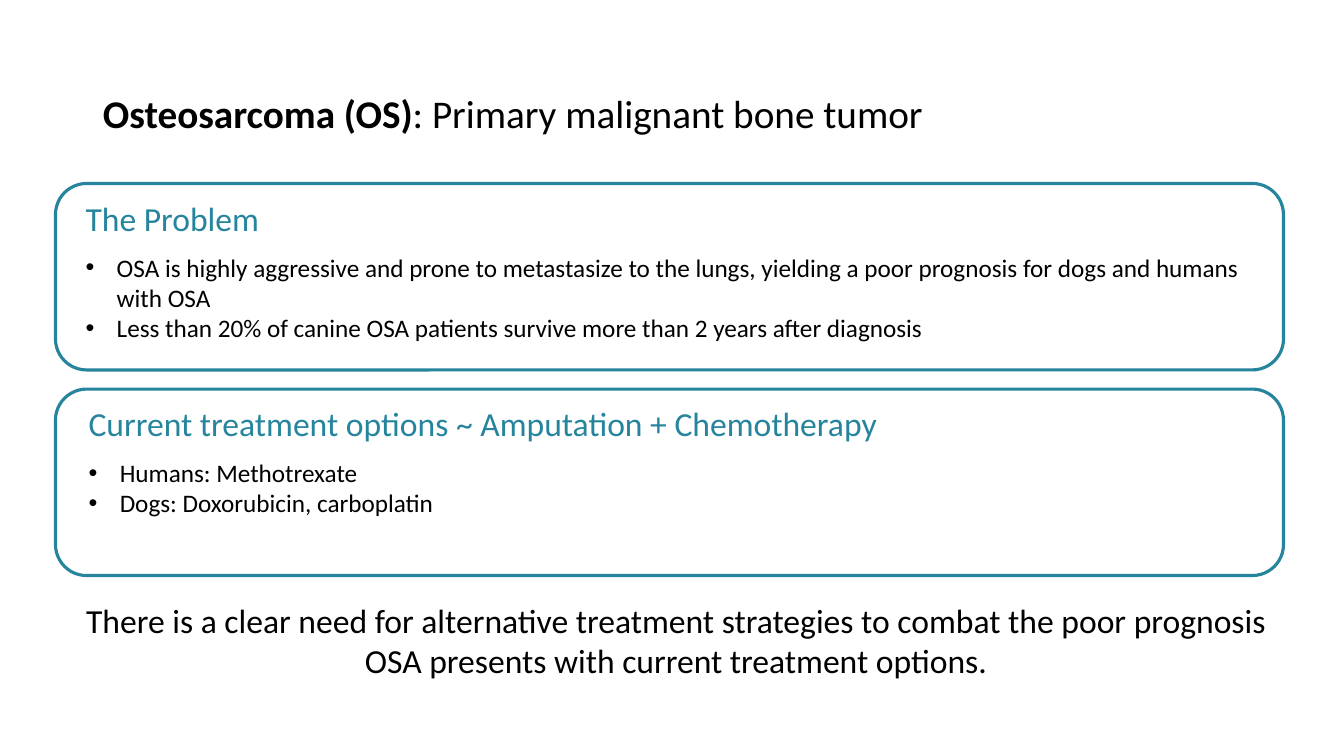
from dataclasses import dataclass

from lxml import etree
from pptx import Presentation
from pptx.dml.color import RGBColor
from pptx.enum.shapes import MSO_SHAPE as Shape
from pptx.enum.text import MSO_ANCHOR as Anchor, MSO_AUTO_SIZE as AutoSize, PP_ALIGN as Align
from pptx.oxml.ns import qn
from pptx.util import Inches, Pt

BLACK = RGBColor(0x00, 0x00, 0x00)
WHITE = RGBColor(0xFF, 0xFF, 0xFF)
TEAL = RGBColor(0x26, 0x85, 0x9D)
FONT = "Calibri"
BULLET_INDENT = Inches(0.31)


@dataclass(frozen=True)
class Panel:
    top: float
    text_left: float
    text_height: float
    heading: str
    points: tuple[str, ...]


PANELS = (
    Panel(1.82, 0.75, 1.85, "The Problem", (
        "OSA is highly aggressive and prone to metastasize to the lungs, "
        "yielding a poor prognosis for dogs and humans with OSA",
        "Less than 20% of canine OSA patients survive more than 2 years after diagnosis",
    )),
    Panel(3.86, 0.78, 1.55, "Current treatment options ~ Amputation + Chemotherapy", (
        "Humans: Methotrexate",
        "Dogs: Doxorubicin, carboplatin",
    )),
)


def add_run(paragraph, text: str, size: int, color: RGBColor = BLACK, bold: bool = False) -> None:
    run = paragraph.add_run()
    run.text = text
    run.font.name = FONT
    run.font.size = Pt(size)
    run.font.bold = bold
    run.font.color.rgb = color


def add_bullet(paragraph) -> None:
    properties = paragraph._p.get_or_add_pPr()
    properties.set("marL", str(BULLET_INDENT))
    properties.set("indent", str(-BULLET_INDENT))
    etree.SubElement(properties, qn("a:buFont")).set("typeface", "Arial")
    etree.SubElement(properties, qn("a:buChar")).set("char", "•")


def add_text_frame(slide, left: float, top: float, width: float, height: float):
    frame = slide.shapes.add_textbox(
        Inches(left), Inches(top), Inches(width), Inches(height)).text_frame
    frame.word_wrap = True
    return frame


def draw_panel(slide, panel: Panel) -> None:
    outline = slide.shapes.add_shape(
        Shape.ROUNDED_RECTANGLE, Inches(0.55), Inches(panel.top), Inches(12.18), Inches(1.85))
    outline.shadow.inherit = False
    outline.fill.solid()
    outline.fill.fore_color.rgb = WHITE
    outline.line.color.rgb = TEAL
    outline.line.width = Pt(2.25)

    body = add_text_frame(slide, panel.text_left, panel.top + 0.09, 11.84, panel.text_height)
    heading = body.paragraphs[0]
    heading.space_after = Pt(10)
    add_run(heading, panel.heading, 24, TEAL)
    for point in panel.points:
        paragraph = body.add_paragraph()
        add_bullet(paragraph)
        add_run(paragraph, point, 18)


def main() -> None:
    deck = Presentation()
    deck.slide_width, deck.slide_height = Inches(13.33), Inches(7.5)
    slide = deck.slides.add_slide(deck.slide_layouts[5])

    # Title
    title = slide.shapes.title
    title.left, title.top = Inches(0.92), Inches(0.69)
    title.width, title.height = Inches(11.5), Inches(0.92)
    title.text_frame.vertical_anchor = Anchor.MIDDLE
    title.text_frame.auto_size = AutoSize.NONE
    definition = title.text_frame.paragraphs[0]
    definition.alignment = Align.LEFT
    definition.line_spacing = 0.9
    add_run(definition, "Osteosarcoma (OS)", 28, bold=True)
    add_run(definition, ": Primary malignant bone tumor", 28)

    # Problem and treatment panels
    for panel in PANELS:
        draw_panel(slide, panel)

    # Conclusion
    conclusion = add_text_frame(slide, 0.71, 5.9, 11.99, 0.91).paragraphs[0]
    conclusion.alignment = Align.CENTER
    add_run(conclusion, "There is a clear need for alternative treatment strategies to combat "
            "the poor prognosis OSA presents with current treatment options.", 24)

    deck.save("out.pptx")


if __name__ == "__main__":
    main()
